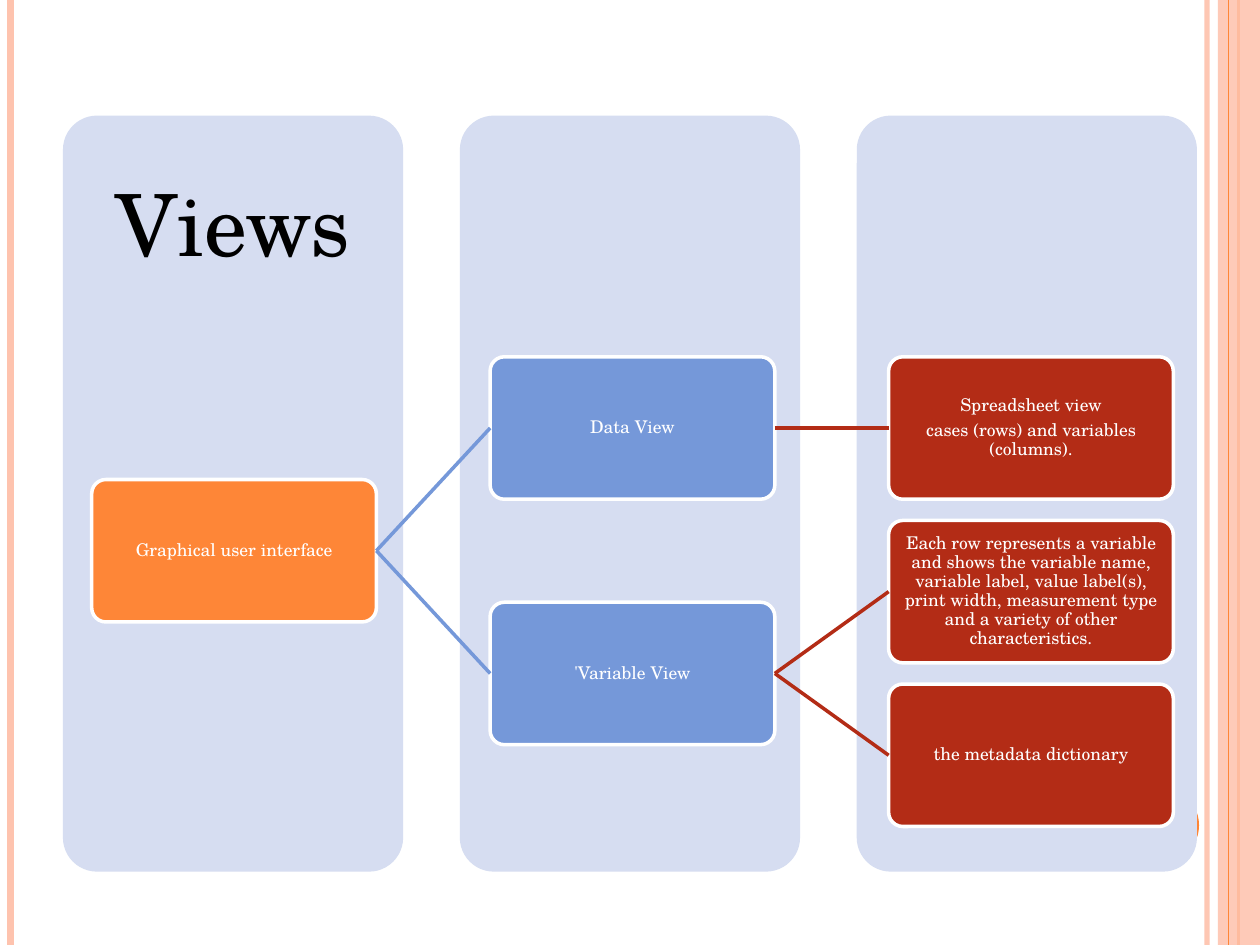
from dataclasses import dataclass

from lxml.etree import SubElement
from pptx import Presentation
from pptx.dml.color import RGBColor
from pptx.dml.fill import FillFormat
from pptx.enum.shapes import MSO_CONNECTOR, MSO_SHAPE
from pptx.enum.text import MSO_ANCHOR, MSO_AUTO_SIZE, PP_ALIGN
from pptx.oxml.ns import qn
from pptx.shapes.autoshape import Shape
from pptx.shapes.connector import Connector
from pptx.slide import Slide
from pptx.text.text import TextFrame
from pptx.util import Pt

FONT = "TeX Gyre Schola"
WHITE, ORANGE, BLUE, RED = "FFFFFF", "FE8637", "7598D9", "B32C16"
PEACH, PANEL = "FEC3AE", "D6DDF1"
SLIDE_W, SLIDE_H = 720, 540
PANEL_LEFT, PANEL_TOP, PANEL_W, PANEL_H, PANEL_STEP = 36, 66.1, 194.4, 432, 226.8
NODE_LEFT, NODE_TOP, NODE_W, NODE_H = 52.4, 203.9, 162.7, 81.4
LEVEL_STEP, ROW_STEP = 227.7, 93.5
LEVEL_COLORS = (ORANGE, BLUE, RED)


@dataclass
class Rule:
    x: float
    color: str
    width: float
    alpha: int = 100


@dataclass
class Node:
    level: int
    row: float
    paragraphs: tuple[str, ...]
    parent: int | None = None


RULES = (
    Rule(689.8, PEACH, 3, 93),
    Rule(6, PEACH, 4.5),
    Rule(707.8, ORANGE, 1.5),
)
INNER_RULE = Rule(702, ORANGE, 0.75)

NODES = (
    Node(0, 0.75, ("Graphical user interface",)),
    Node(1, 0, ("Data View",), 0),
    Node(1, 1.5, ("'Variable View",), 0),
    Node(2, 0, ("Spreadsheet view", "cases (rows) and variables (columns)."), 1),
    Node(2, 1, (
        "Each row represents a variable and shows the variable name, "
        "variable label, value label(s), print width, measurement type "
        "and a variety of other characteristics.",
    ), 2),
    Node(2, 2, ("the metadata dictionary",), 2),
)


def rgb(color: str) -> RGBColor:
    return RGBColor.from_string(color)


def paint(fill: FillFormat, color: str) -> None:
    fill.solid()
    fill.fore_color.rgb = rgb(color)


def set_alpha(sp: Shape | Connector, alpha: int) -> None:
    clr = next(sp._element.spPr.iter(qn("a:srgbClr")))
    SubElement(clr, qn("a:alpha")).set("val", str(alpha * 1000))


def add_box(s: Slide, kind: MSO_SHAPE, x: float, y: float, w: float, h: float,
            color: str) -> Shape:
    sp = s.shapes.add_shape(kind, Pt(x), Pt(y), Pt(w), Pt(h))
    sp.shadow.inherit = False
    paint(sp.fill, color)
    sp.line.fill.background()
    if kind == MSO_SHAPE.ROUNDED_RECTANGLE:
        sp.adjustments[0] = 0.1
    return sp


def add_line(s: Slide, x1: float, y1: float, x2: float, y2: float,
             color: str, width: float) -> Connector:
    c = s.shapes.add_connector(MSO_CONNECTOR.STRAIGHT, Pt(x1), Pt(y1), Pt(x2), Pt(y2))
    paint(c.line.fill, color)
    c.line.width = Pt(width)
    SubElement(c._element.spPr, qn("a:effectLst"))
    return c


def add_rule(s: Slide, rule: Rule) -> None:
    c = add_line(s, rule.x, 0, rule.x, SLIDE_H, rule.color, rule.width)
    if rule.alpha < 100:
        set_alpha(c, rule.alpha)


def write(tf: TextFrame, paragraphs: tuple[str, ...], size: float, color: str,
          inset: float) -> None:
    tf.word_wrap = True
    tf.auto_size = MSO_AUTO_SIZE.NONE
    tf.vertical_anchor = MSO_ANCHOR.MIDDLE
    tf.margin_left = tf.margin_right = tf.margin_top = tf.margin_bottom = Pt(inset)
    for i, text in enumerate(paragraphs):
        p = tf.add_paragraph() if i else tf.paragraphs[0]
        p.alignment = PP_ALIGN.CENTER
        p.line_spacing = 0.9
        p.space_before = Pt(0)
        p.space_after = Pt(0.35 * size)
        r = p.add_run()
        r.text = text
        r.font.name = FONT
        r.font.size = Pt(size)
        r.font.color.rgb = rgb(color)


def add_node(s: Slide, node: Node) -> Shape:
    sp = add_box(s, MSO_SHAPE.ROUNDED_RECTANGLE,
                 NODE_LEFT + node.level * LEVEL_STEP, NODE_TOP + node.row * ROW_STEP,
                 NODE_W, NODE_H, LEVEL_COLORS[node.level])
    paint(sp.line.fill, WHITE)
    sp.line.width = Pt(2)
    write(sp.text_frame, node.paragraphs, 10, WHITE, 0.8)
    return sp


def join(s: Slide, parent: Shape, child: Shape, color: str) -> None:
    c = add_line(s, 0, 0, 0, 0, color, 2)
    c.begin_connect(parent, 3)
    c.end_connect(child, 1)


def add_frame(s: Slide) -> None:
    for rule in RULES:
        add_rule(s, rule)
    band = add_box(s, MSO_SHAPE.RECTANGLE, 696, 0, 24, SLIDE_H, PEACH)
    set_alpha(band, 87)
    add_rule(s, INNER_RULE)
    add_box(s, MSO_SHAPE.OVAL, 642, 450, 43.2, 43.2, ORANGE)


def add_title(s: Slide, text: str) -> None:
    title = s.shapes.title
    title.left, title.top = Pt(PANEL_LEFT), Pt(PANEL_TOP)
    title.width, title.height = Pt(PANEL_W), Pt(129.6)
    write(title.text_frame, (text,), 49, "000000", 27.4)
    s.shapes._spTree.append(title._element)


def main() -> None:
    prs = Presentation()
    prs.slide_width, prs.slide_height = Pt(SLIDE_W), Pt(SLIDE_H)
    s = prs.slides.add_slide(prs.slide_layouts[5])
    paint(s.background.fill, WHITE)
    add_frame(s)
    for col in reversed(range(len(LEVEL_COLORS))):
        add_box(s, MSO_SHAPE.ROUNDED_RECTANGLE, PANEL_LEFT + col * PANEL_STEP,
                PANEL_TOP, PANEL_W, PANEL_H, PANEL)
    add_title(s, "Views")
    boxes = [add_node(s, node) for node in NODES]
    for node, box in zip(NODES, boxes):
        if node.parent is not None:
            join(s, boxes[node.parent], box, LEVEL_COLORS[node.level])
    prs.save("out.pptx")


if __name__ == "__main__":
    main()
